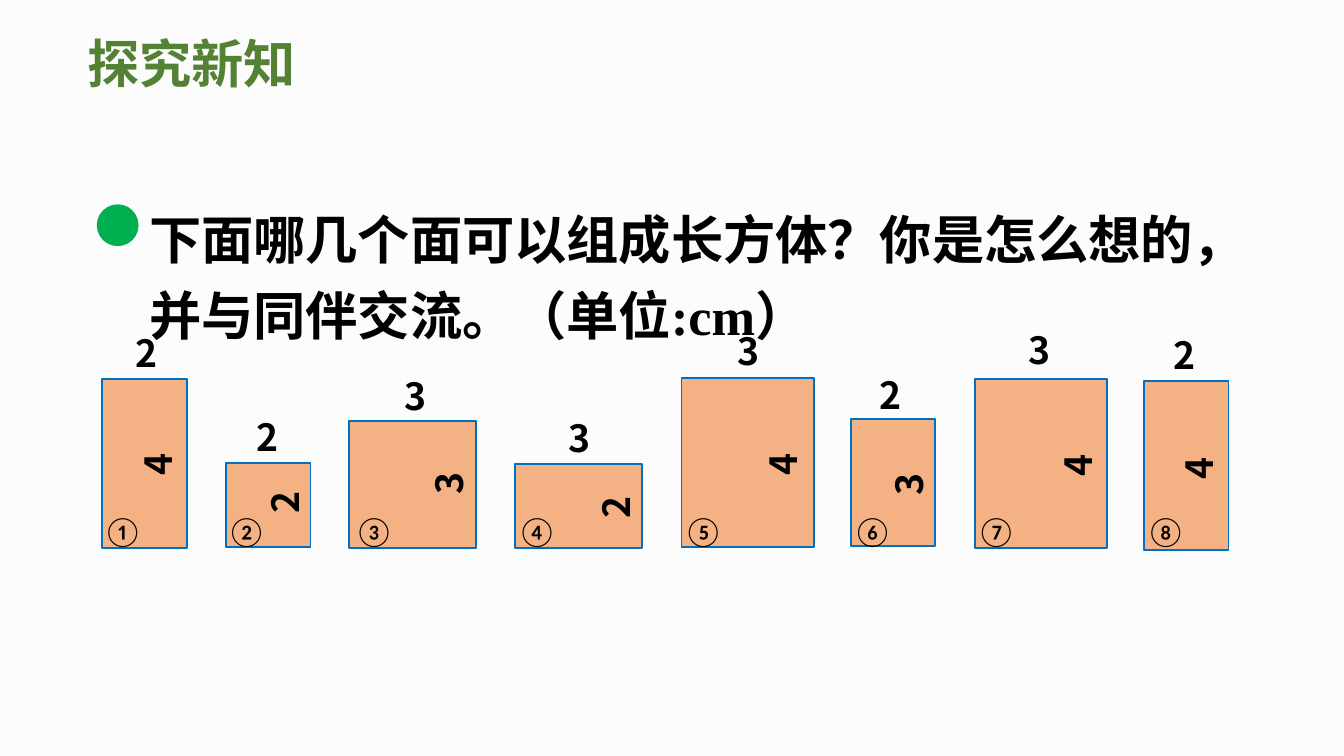
from lxml.etree import SubElement
from pptx import Presentation
from pptx.dml.color import RGBColor
from pptx.enum.shapes import MSO_SHAPE
from pptx.enum.text import MSO_AUTO_SIZE
from pptx.oxml.ns import qn
from pptx.util import Cm, Pt

COLORS = {
    "background": "FCFCFC",
    "title": "548235",
    "text": "000000",
    "bullet": "00B050",
    "face": "F4B183",
    "edge": "0070C0",
}
CJK = "Noto Sans CJK SC"
TITLE = {"name": CJK, "size": Pt(28), "bold": True}
QUESTION = {"name": "Times New Roman", "size": Pt(28), "bold": True}
LENGTH = {"name": CJK, "size": Pt(20), "bold": True}
NUMBER = {"name": "Calibri", "size": Pt(16), "bold": False}
UNIT = 0.8
NUMBER_TOP = 9.55

# number, sides, drawn width, face corner, number left, width label, height label
FACES = [
    ("①", (2, 4), 1.6, (1.93, 7.16), 1.7, (2.31, 6.12), (2.44, 8.13)),
    ("②", (2, 2), 1.6, (4.27, 8.74), 4.04, (4.6, 7.7), (4.85, 8.84)),
    ("③", (3, 3), 2.4, (6.6, 7.95), 6.45, (7.39, 6.93), (7.95, 8.48)),
    ("④", (3, 2), 2.4, (9.73, 8.76), 9.53, (10.49, 7.72), (11.1, 8.94)),
    ("⑤", (3, 4), 2.5, (12.88, 7.14), 12.67, (13.69, 6.07), (14.25, 8.13)),
    ("⑥", (2, 3), 1.6, (16.08, 7.92), 15.87, (16.38, 6.91), (16.64, 8.51)),
    ("⑦", (3, 4), 2.5, (18.42, 7.16), 18.21, (19.18, 6.05), (19.84, 8.15)),
    ("⑧", (2, 4), 1.6, (21.62, 7.19), 21.41, (21.92, 6.15), (22.12, 8.2)),
]


def color(name):
    """Return the named colour."""
    return RGBColor.from_string(COLORS[name])


def add_text(shapes, text, box, style, fill="text", rotation=0, spacing=None):
    """Add a one-paragraph text box that grows with its text."""
    s = shapes.add_textbox(*map(Cm, box))
    s.rotation = rotation
    tf = s.text_frame
    tf.word_wrap = True
    tf.auto_size = MSO_AUTO_SIZE.SHAPE_TO_FIT_TEXT
    p = tf.paragraphs[0]
    p.line_spacing = spacing
    r = p.add_run()
    r.text = text
    for key, value in style.items():
        setattr(r.font, key, value)
    r.font.color.rgb = color(fill)
    SubElement(r.font._element, qn("a:ea"), typeface=CJK)


def add_solid(shapes, kind, box, fill, line=None):
    """Add a filled preset shape, outlined if a line colour is given."""
    s = shapes.add_shape(kind, *map(Cm, box))
    s.shadow.inherit = False
    s.fill.solid()
    s.fill.fore_color.rgb = color(fill)
    if line:
        s.line.color.rgb = color(line)
        s.line.width = Pt(1)
    else:
        s.line.fill.background()


def add_face(slide, number, sides, width, corner, number_left, top_at, side_at):
    """Add a numbered rectangle labelled with its two side lengths."""
    shapes = slide.shapes.add_group_shape().shapes
    across, down = sides
    add_solid(shapes, MSO_SHAPE.RECTANGLE, (*corner, width, down * UNIT), "face", "edge")
    add_text(shapes, number, (number_left, NUMBER_TOP, 1.09, 0.94), NUMBER)
    add_text(shapes, str(across), (*top_at, 1.09, 1.12), LENGTH)
    add_text(shapes, str(down), (*side_at, 1.09, 1.12), LENGTH, rotation=270)


def main():
    """Build the slide and save it."""
    prs = Presentation()
    prs.slide_width, prs.slide_height = Cm(25.4), Cm(14.28)
    slide = prs.slides.add_slide(prs.slide_layouts[6])
    slide.background.fill.solid()
    slide.background.fill.fore_color.rgb = color("background")
    add_text(slide.shapes, "探究新知", (1.4, 0.46, 4.72, 1.45), TITLE, "title")
    add_text(slide.shapes, "下面哪几个面可以组成长方体？你是怎么想的，并与同伴交流。（单位:cm）",
             (2.57, 3.56, 21.34, 3.12), QUESTION, spacing=1.2)
    add_solid(slide.shapes, MSO_SHAPE.OVAL, (1.83, 3.86, 0.79, 0.79), "bullet")
    for face in FACES:
        add_face(slide, *face)
    prs.save("out.pptx")


if __name__ == "__main__":
    main()
